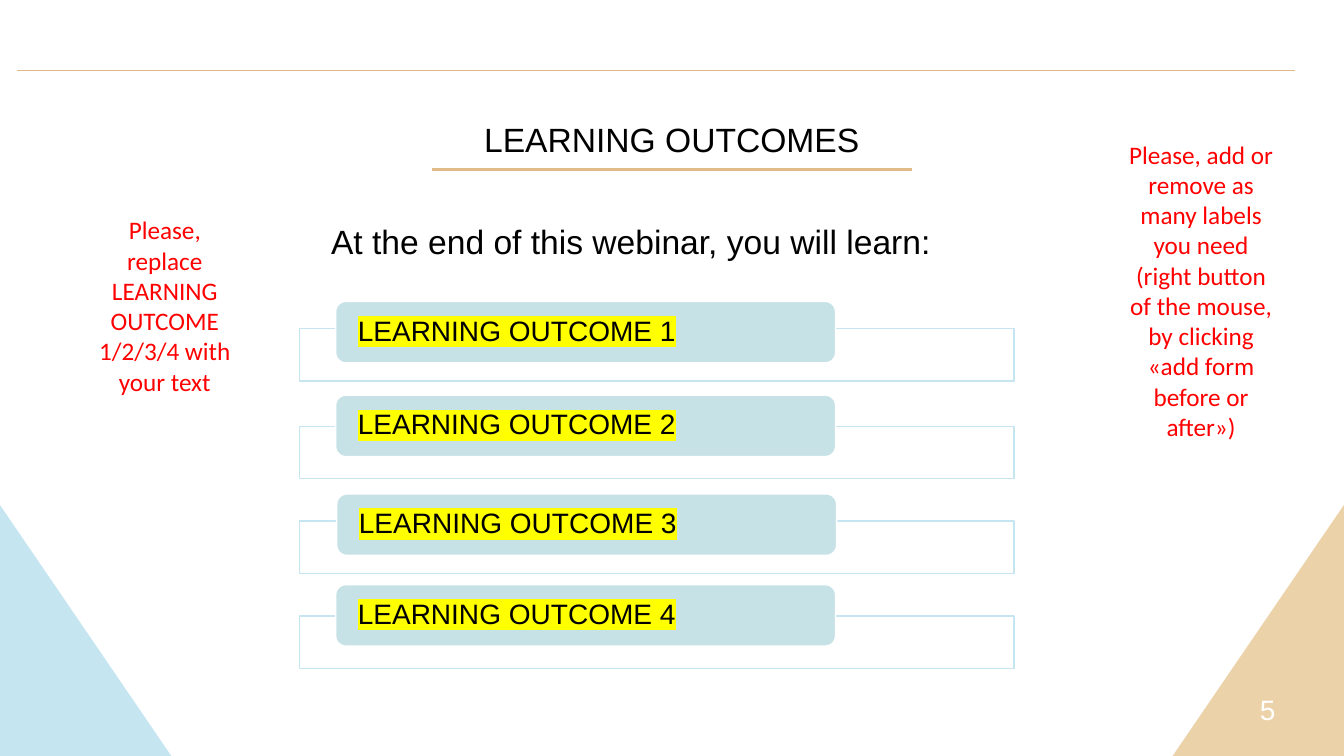
"""Build the learning outcomes slide of a webinar deck."""
from dataclasses import dataclass

from lxml.etree import SubElement
from pptx import Presentation
from pptx.dml.color import RGBColor
from pptx.enum.shapes import MSO_CONNECTOR, MSO_SHAPE
from pptx.enum.text import MSO_ANCHOR, MSO_AUTO_SIZE, PP_ALIGN
from pptx.oxml.ns import qn
from pptx.util import Inches, Pt

COLUMNS, ROWS = 133.33, 75


@dataclass(frozen=True)
class Theme:
    """Colours, fonts and type sizes of the slide."""

    sand: str = "ECD2A9"
    gold: str = "E0BB87"
    sky: str = "C5E6F1"
    label: str = "C6E2E6"
    white: str = "FFFFFF"
    black: str = "000000"
    red: str = "FF0000"
    yellow: str = "FFFF00"
    main_font: str = "Arial"
    hint_font: str = "Calibri"
    heading_size: int = 24
    label_size: int = 20
    hint_size: int = 18


THEME = Theme()


def cells(*counts):
    """Turn counts of grid cells, a tenth of an inch each, into lengths."""
    return [Inches(count / 10) for count in counts]


def color(code):
    """Turn a hex code into a colour."""
    return RGBColor.from_string(code)


def add_run(para, text, size, ink, font=THEME.main_font, highlight=None):
    """Add one styled run to a paragraph."""
    span = para.add_run()
    span.text = text
    span.font.size = Pt(size)
    span.font.color.rgb = color(ink)
    if highlight:
        mark = SubElement(span.font._element, qn("a:highlight"))
        SubElement(mark, qn("a:srgbClr")).set("val", highlight)
    span.font.name = font


def add_text(page, place, text, size, ink, font=THEME.main_font, spacing=None, grow=True):
    """Add a centred, wrapping text box."""
    frame = page.shapes.add_textbox(*cells(*place)).text_frame
    frame.word_wrap = True
    frame.auto_size = MSO_AUTO_SIZE.SHAPE_TO_FIT_TEXT if grow else MSO_AUTO_SIZE.NONE
    para = frame.paragraphs[0]
    para.alignment = PP_ALIGN.CENTER
    para.line_spacing = spacing
    add_run(para, text, size, ink, font)


def add_block(shapes, kind, place, fill, edge=None):
    """Add a flat preset shape, with an outline if an edge colour is given."""
    block = shapes.add_shape(kind, *cells(*place))
    block.shadow.inherit = False
    block.fill.solid()
    block.fill.fore_color.rgb = color(fill)
    if edge:
        block.line.color.rgb = color(edge)
        block.line.width = Pt(1)
    else:
        block.line.fill.background()
    return block


def add_rule(page, left, right, row, weight):
    """Add a horizontal gold rule."""
    rule = page.shapes.add_connector(MSO_CONNECTOR.STRAIGHT, *cells(left, row, right, row))
    rule.line.color.rgb = color(THEME.gold)
    rule.line.width = Pt(weight)
    SubElement(rule._element.spPr, qn("a:effectLst"))


def add_corners(page):
    """Add the two triangles in the bottom corners."""
    width, height = 17, 24.9
    for left, fill in ((COLUMNS - width, THEME.sand), (0, THEME.sky)):
        place = (left, ROWS - height, width, height)
        corner = add_block(page.shapes, MSO_SHAPE.RIGHT_TRIANGLE, place, fill)
        if left:
            corner._element.spPr.xfrm.set("flipH", "1")


def add_outcome(shapes, text, frame_row, label_column, label_row):
    """Add an outlined frame with a highlighted label over it."""
    add_block(shapes, MSO_SHAPE.RECTANGLE, (29.7, frame_row, 70.9, 5.2), THEME.white, THEME.sky)
    place = (label_column, label_row, 49.6, 6.1)
    label = add_block(shapes, MSO_SHAPE.ROUNDED_RECTANGLE, place, THEME.label, THEME.white)
    frame = label.text_frame
    frame.word_wrap = True
    frame.vertical_anchor = MSO_ANCHOR.MIDDLE
    frame.margin_left = frame.margin_right = Inches(0.19)
    frame.margin_top = frame.margin_bottom = 0
    para = frame.paragraphs[0]
    para.alignment = PP_ALIGN.LEFT
    para.line_spacing = 0.9
    add_run(para, text, THEME.label_size, THEME.black, highlight=THEME.yellow)


def main():
    """Draw the slide and save the deck."""
    deck = Presentation()
    deck.slide_width, deck.slide_height = cells(COLUMNS, ROWS)
    page = deck.slides.add_slide(deck.slide_layouts[6])

    add_corners(page)
    add_text(page, (121.4, 68.2, 8.7, 3.5), "5", THEME.label_size, THEME.white, grow=False)
    add_rule(page, 1.7, 128.5, 7, 0.5)

    heading = {"size": THEME.heading_size, "ink": THEME.black, "spacing": 1.15}
    add_text(page, (33.3, 10.7, 66.7, 5.2), "LEARNING OUTCOMES", **heading)
    add_rule(page, 42.9, 90.5, 16.8, 2.25)

    outcomes = page.shapes.add_group_shape().shapes
    places = ((32.6, 33.3, 29.9), (42.3, 33.3, 39.2), (51.7, 33.4, 49), (61.1, 33.3, 58))
    for number, place in enumerate(places, 1):
        add_outcome(outcomes, f"LEARNING OUTCOME {number}", *place)

    add_text(page, (29.7, 20.8, 66.7, 5.2), "At the end of this webinar, you will learn: ", **heading)
    hint = {"size": THEME.hint_size, "ink": THEME.red, "font": THEME.hint_font}
    add_text(page, (110.9, 13.3, 16.5, 31.3),
             "Please, add or remove as many labels you need (right button of the mouse, "
             "by clicking «add form before or after»)", **hint)
    add_text(page, (8.1, 20.8, 16.5, 19.2),
             "Please, replace LEARNING OUTCOME 1/2/3/4 with your text", **hint)

    deck.save("out.pptx")


if __name__ == "__main__":
    main()
